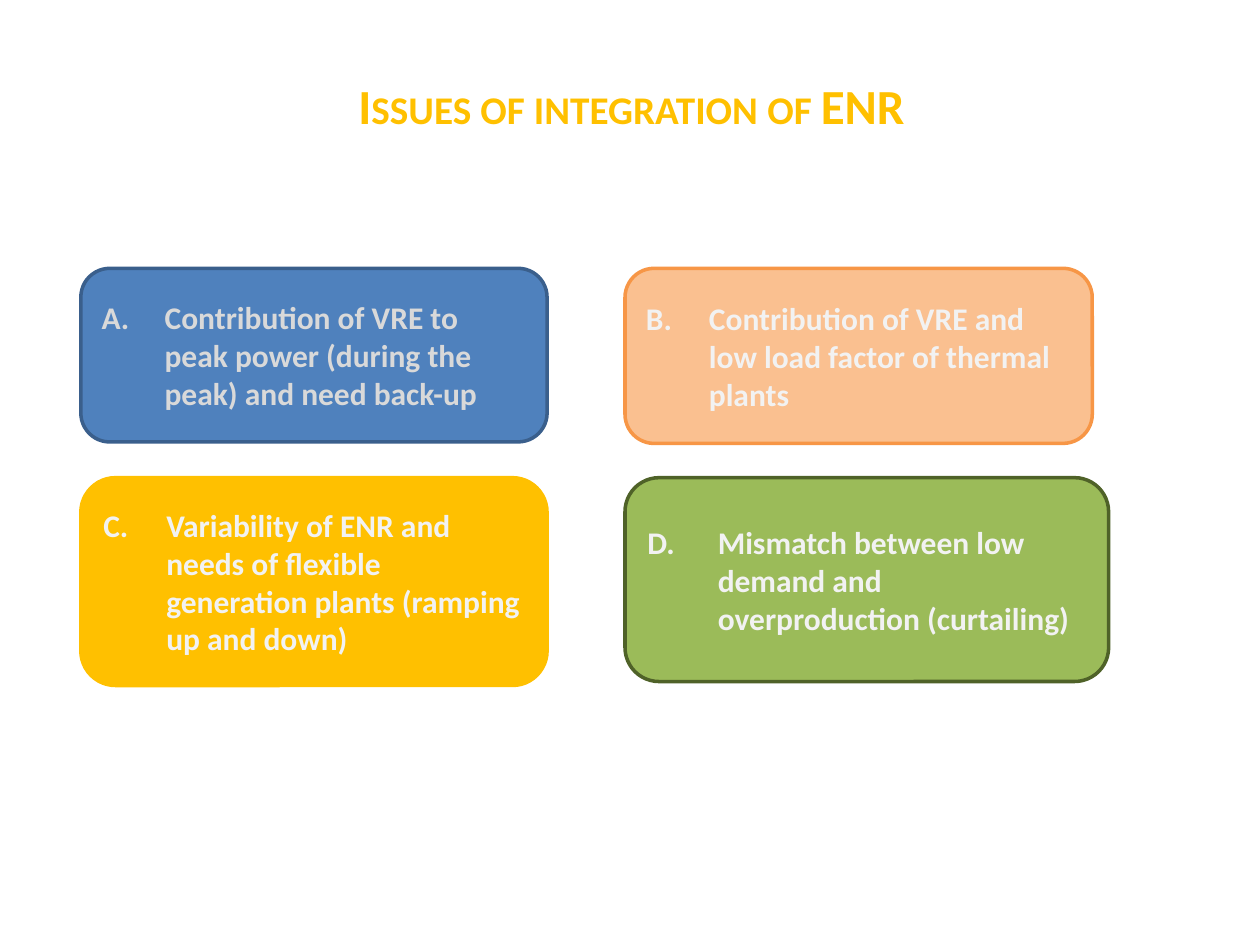
from dataclasses import dataclass

from lxml.etree import SubElement
from pptx import Presentation
from pptx.dml.color import RGBColor
from pptx.enum.shapes import MSO_SHAPE
from pptx.enum.text import MSO_ANCHOR, PP_ALIGN
from pptx.oxml.ns import qn
from pptx.slide import Slide
from pptx.util import Cm, Pt

FONT = "Calibri"
GOLD = RGBColor(0xFF, 0xC0, 0x00)
BLUE = RGBColor(0x4F, 0x81, 0xBD)
NAVY = RGBColor(0x3A, 0x5F, 0x8C)
PEACH = RGBColor(0xFA, 0xC0, 0x90)
ORANGE = RGBColor(0xF7, 0x96, 0x46)
GREEN = RGBColor(0x9B, 0xBB, 0x59)
OLIVE = RGBColor(0x4F, 0x62, 0x28)
GREY = RGBColor(0xD9, 0xD9, 0xD9)
PALE = RGBColor(0xF2, 0xF2, 0xF2)

# Grid of two columns and two rows, in cm
LEFTS = (1.63, 12.6)
TOPS = (5.41, 9.63)


@dataclass
class Issue:
    text: str
    width: float
    height: float
    fill: RGBColor
    line: RGBColor
    ink: RGBColor = PALE
    indent: float = 1.27


ISSUES = [
    Issue("Contribution of VRE to peak power (during the peak) and need back-up",
          9.4, 3.5, BLUE, NAVY, GREY),
    Issue("Contribution of VRE and low load factor of thermal plants",
          9.42, 3.53, PEACH, ORANGE),
    Issue("Variability of ENR and needs of flexible generation plants "
          "(ramping up and down)", 9.4, 4.19, GOLD, GOLD),
    Issue("Mismatch between low demand and overproduction (curtailing)",
          9.75, 4.11, GREEN, OLIVE, indent=1.42),
]


def style(para, size: int, ink: RGBColor) -> None:
    for run in para.runs:
        font = run.font
        font.name, font.size, font.bold = FONT, Pt(size), True
        font.color.rgb = ink


def add_title(slide: Slide, text: str) -> None:
    title = slide.shapes.title
    title.left, title.top = Cm(1.3), Cm(0.53)
    title.width, title.height = Cm(22.86), Cm(3.18)
    frame = title.text_frame
    frame.text = text
    frame.vertical_anchor = MSO_ANCHOR.MIDDLE
    para = frame.paragraphs[0]
    para.alignment = PP_ALIGN.CENTER
    style(para, 28, GOLD)
    para.runs[0].font._element.set("cap", "small")


def add_issue(slide: Slide, issue: Issue, index: int) -> None:
    row, col = divmod(index, len(LEFTS))
    box = slide.shapes.add_shape(
        MSO_SHAPE.ROUNDED_RECTANGLE, Cm(LEFTS[col]), Cm(TOPS[row]),
        Cm(issue.width), Cm(issue.height))
    box.shadow.inherit = False
    box.fill.solid()
    box.fill.fore_color.rgb = issue.fill
    box.line.color.rgb = issue.line
    box.line.width = Pt(2)

    frame = box.text_frame
    frame.word_wrap = True
    frame.vertical_anchor = MSO_ANCHOR.MIDDLE
    frame.text = issue.text
    para = frame.paragraphs[0]
    para.alignment = PP_ALIGN.LEFT
    style(para, 18, issue.ink)

    # Lettered hanging indent: A., B., C., D.
    props = para._p.get_or_add_pPr()
    props.set("marL", str(Cm(issue.indent)))
    props.set("indent", str(-Cm(issue.indent)))
    SubElement(props, qn("a:buFont"), typeface="+mj-lt")
    SubElement(props, qn("a:buAutoNum"), type="alphaUcPeriod",
               startAt=str(index + 1))


def main() -> None:
    deck = Presentation()
    deck.slide_width, deck.slide_height = Cm(25.4), Cm(19.05)
    slide = deck.slides.add_slide(deck.slide_layouts[5])
    add_title(slide, "Issues of integration of ENR")
    for index, issue in enumerate(ISSUES):
        add_issue(slide, issue, index)
    deck.save("out.pptx")


if __name__ == "__main__":
    main()
